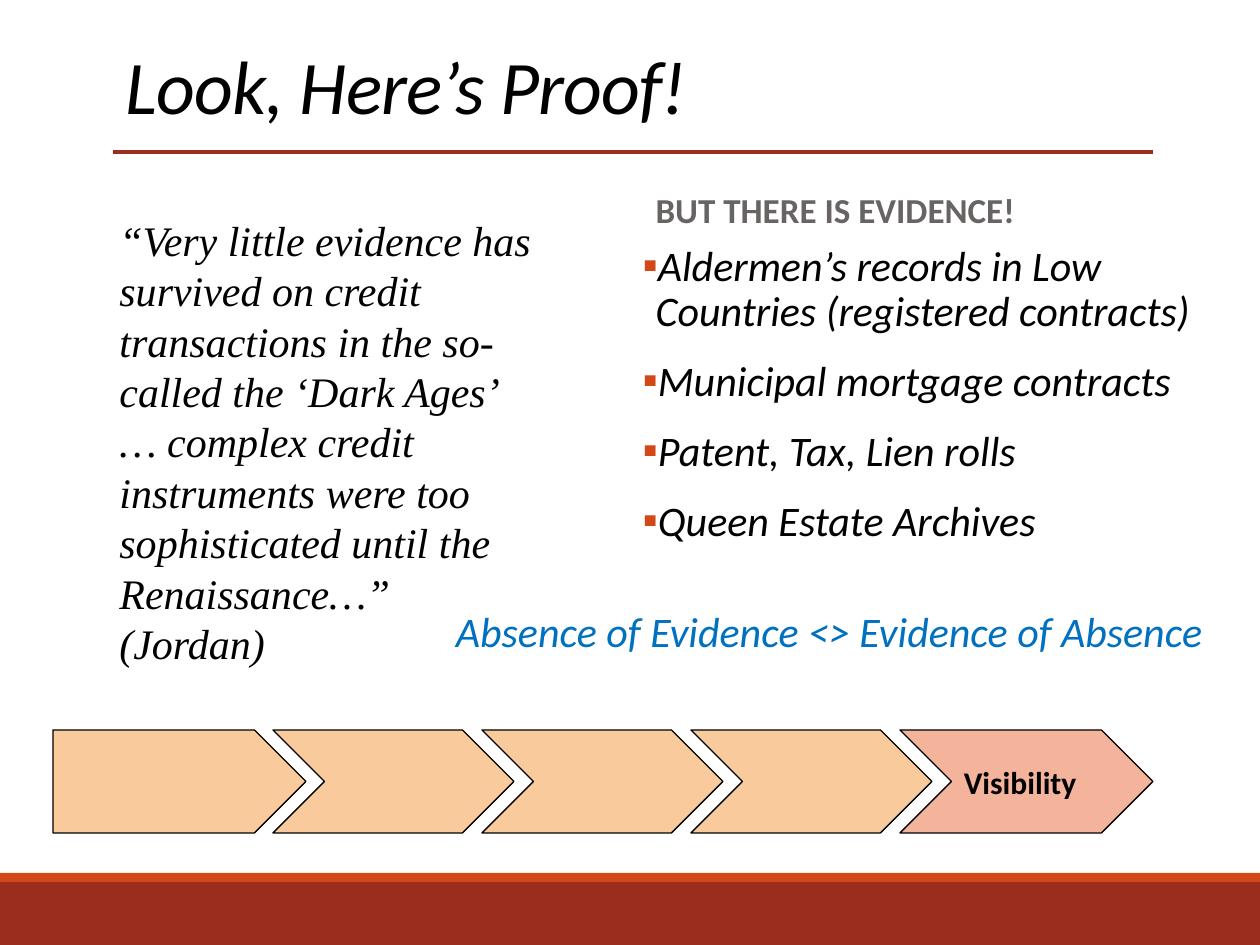
"""Build the evidence slide: a quotation, a list of records and a row of step arrows."""
from lxml.etree import SubElement
from pptx import Presentation
from pptx.dml.color import RGBColor
from pptx.enum.shapes import MSO_CONNECTOR as Connector, MSO_SHAPE as Shape
from pptx.enum.text import MSO_ANCHOR as Anchor, MSO_AUTO_SIZE as AutoSize, PP_ALIGN as Align
from pptx.oxml.ns import qn
from pptx.util import Pt

PX = 7257
BLACK = RGBColor(0x00, 0x00, 0x00)
GREY = RGBColor(0x69, 0x64, 0x64)
BLUE = RGBColor(0x00, 0x70, 0xC0)
BRICK = RGBColor(0x9B, 0x2D, 0x1F)
ORANGE = RGBColor(0xD3, 0x48, 0x17)
PEACH = RGBColor(0xF9, 0xCB, 0x9C)
SALMON = RGBColor(0xF4, 0xB3, 0x9B)

TITLE = "Look, Here’s Proof!"
HEADING = "BUT THERE IS EVIDENCE!"
RECORDS = [
    "Aldermen’s records in Low Countries (registered contracts)",
    "Municipal mortgage contracts",
    "Patent, Tax, Lien rolls",
    "Queen Estate Archives",
]
QUOTE = (
    "“Very little evidence has survived on credit transactions in the so-called "
    "the ‘Dark Ages’ … complex credit instruments were too sophisticated until "
    "the Renaissance…” (Jordan)"
)
MOTTO = "Absence of Evidence <> Evidence of Absence"
STEPS = ["", "", "", "", "Visibility"]
FOOTER_BANDS = [(882, 63, BRICK), (873, 9, ORANGE)]

STEP_TOP, STEP_HEIGHT, STEP_PITCH = 730, 103, 209
FIRST_LEFT, SECOND_LEFT = 53, 273
END_WIDTH, INNER_WIDTH = 253, 241


def place(box, left, top, width, height):
    box.left, box.top, box.width, box.height = (n * PX for n in (left, top, width, height))


def write(box, lines, size, color=BLACK, font="Calibri", bold=False, italic=False,
          spacing=None, before=0, after=0, anchor=Anchor.TOP, side_inset=None):
    frame = box.text_frame
    frame.word_wrap = True
    frame.auto_size = AutoSize.NONE
    frame.vertical_anchor = anchor
    if side_inset is not None:
        frame.margin_left = frame.margin_right = side_inset
    for index, line in enumerate(lines):
        para = frame.add_paragraph() if index else frame.paragraphs[0]
        para.alignment = Align.LEFT
        para.line_spacing = spacing
        para.space_before, para.space_after = Pt(before), Pt(after)
        span = para.add_run()
        span.text = line
        span.font.name, span.font.size = font, Pt(size)
        span.font.bold, span.font.italic = bold, italic
        span.font.color.rgb = color
    return frame.paragraphs


def add_bullet(para):
    props = para._p.get_or_add_pPr()
    props.set("marL", "91440")
    props.set("indent", "-91440")
    color = SubElement(props, qn("a:buClr"))
    SubElement(color, qn("a:srgbClr"), val=str(ORANGE))
    SubElement(props, qn("a:buFont"), typeface="Calibri")
    SubElement(props, qn("a:buChar"), char="▪")


def add_filled(slide, kind, area, fill, outline=None):
    shape = slide.shapes.add_shape(kind, *(n * PX for n in area))
    shape.shadow.inherit = False
    shape.fill.solid()
    shape.fill.fore_color.rgb = fill
    if outline is None:
        shape.line.fill.background()
    else:
        shape.line.color.rgb = outline
        shape.line.width = Pt(0.75)
    return shape


def add_text_box(slide, area):
    return slide.shapes.add_textbox(*(n * PX for n in area))


def add_frame(slide):
    for top, height, color in FOOTER_BANDS:
        add_filled(slide, Shape.RECTANGLE, (0, top, 1260, height), color)
    rule = slide.shapes.add_connector(
        Connector.STRAIGHT, 113 * PX, 152 * PX, 1153 * PX, 152 * PX)
    rule.line.color.rgb = BRICK
    rule.line.width = Pt(2)
    SubElement(rule._element.spPr, qn("a:effectLst"))


def add_steps(slide):
    last = len(STEPS) - 1
    for index, label in enumerate(STEPS):
        left = SECOND_LEFT + (index - 1) * STEP_PITCH if index else FIRST_LEFT
        width = END_WIDTH if index in (0, last) else INNER_WIDTH
        kind = Shape.CHEVRON if index else Shape.PENTAGON
        fill = SALMON if label else PEACH
        step = add_filled(slide, kind, (left, STEP_TOP, width, STEP_HEIGHT), fill, BLACK)
        step.adjustments[0] = 0.5
        if label:
            write(step, [label], 18, bold=True, anchor=Anchor.MIDDLE)


def main():
    deck = Presentation()
    deck.slide_width, deck.slide_height = 1260 * PX, 945 * PX
    slide = deck.slides.add_slide(deck.slide_layouts[4])
    holders = {box.placeholder_format.idx: box for box in slide.placeholders}
    for unused in (1, 2):
        holders[unused]._element.getparent().remove(holders[unused]._element)
    add_frame(slide)

    title, heading, records = holders[0], holders[3], holders[4]
    place(title, 113, 39, 1040, 97)
    for span in write(title, [TITLE], 43.2, italic=True, spacing=0.85,
                      anchor=Anchor.BOTTOM)[0].runs:
        span.font._element.set("spc", "-50")
    flow = {"spacing": 0.9, "before": 12, "after": 2}
    place(heading, 643, 161, 510, 102)
    write(heading, [HEADING], 20, GREY, bold=True, anchor=Anchor.MIDDLE, **flow)
    place(records, 643, 239, 552, 543)
    for para in write(records, RECORDS, 24, italic=True, side_inset=0, **flow):
        add_bullet(para)

    quote = add_text_box(slide, (107, 208, 447, 471))
    write(quote, [QUOTE], 24, font="Times New Roman", italic=True)
    add_steps(slide)
    motto = add_text_box(slide, (456, 605, 782, 88))
    write(motto, [MOTTO], 24, BLUE, italic=True, side_inset=0, **flow)
    deck.save("out.pptx")


if __name__ == "__main__":
    main()
